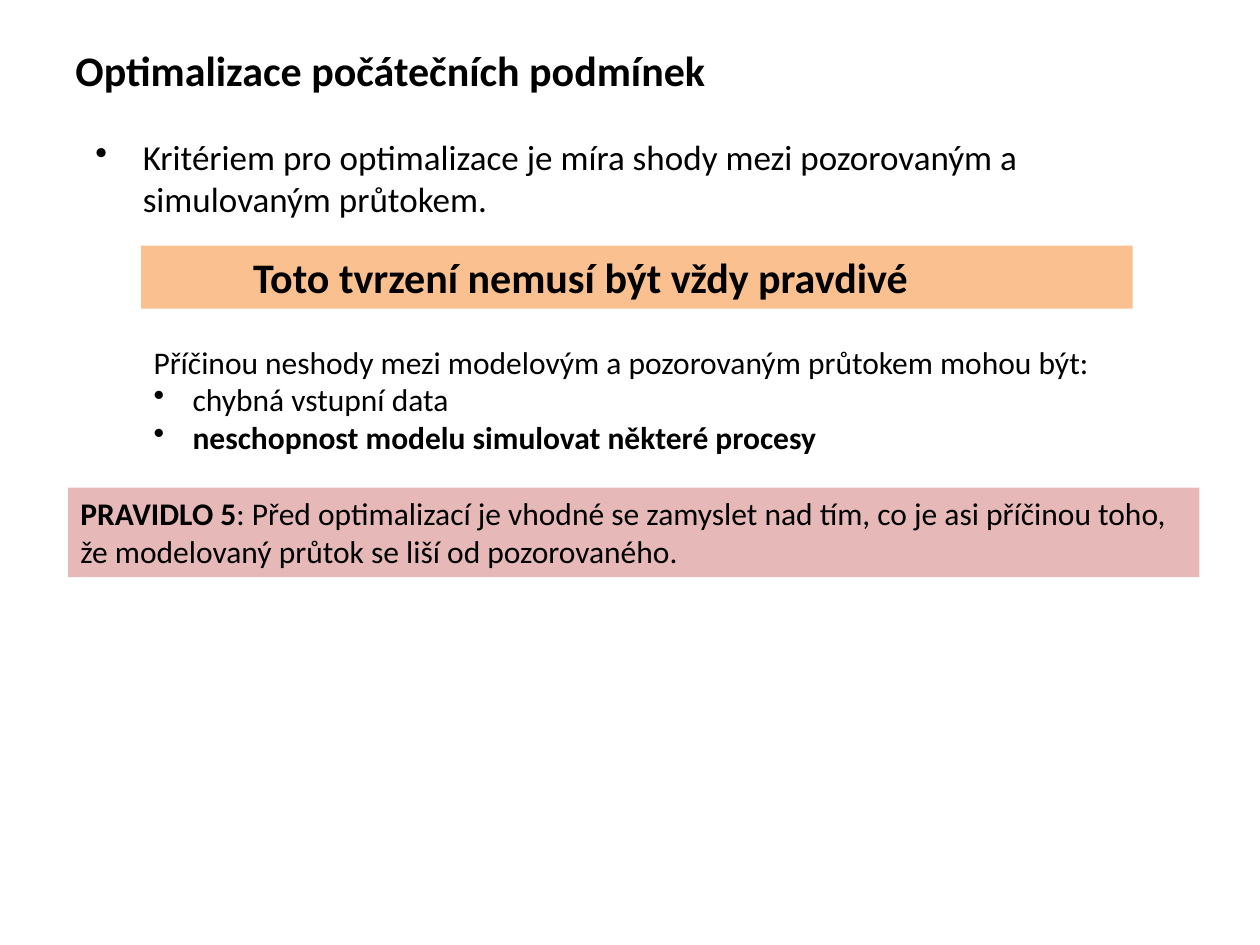
import pptx
import pptx.dml.color
import pptx.enum.shapes
import pptx.enum.text
import pptx.oxml.ns
import pptx.util
from lxml import etree

COLOURS = {"text": "000000", "warning": "FAC090", "rule": "E6B9B8"}
COLUMNS, ROWS = 100, 75


def colour(name):
    return pptx.dml.color.RGBColor.from_string(COLOURS[name])


class SlideBuilder:
    """Holds the style and the current slide; places are columns and rows."""

    font = "Calibri"

    def __init__(self, deck):
        self.page = deck.slides.add_slide(deck.slide_layouts[6])
        self.column = deck.slide_width / COLUMNS
        self.row = deck.slide_height / ROWS

    def place(self, left, top, width, height):
        return (round(left * self.column), round(top * self.row),
                round(width * self.column), round(height * self.row))

    def text(self, area, size, paragraphs, wrap=True):
        """Add a text box; each paragraph is a list of (words, bold) spans."""
        box = self.page.shapes.add_textbox(*self.place(*area))
        return self.fill_text(box, size, paragraphs, wrap)

    def banner(self, area, fill, size, paragraphs):
        """Add a filled rectangle with left-aligned text."""
        box = self.page.shapes.add_shape(
            pptx.enum.shapes.MSO_SHAPE.RECTANGLE, *self.place(*area))
        box.shadow.inherit = False
        box.fill.solid()
        box.fill.fore_color.rgb = colour(fill)
        box.line.fill.background()
        return self.fill_text(box, size, paragraphs)

    def fill_text(self, box, size, paragraphs, wrap=True):
        frame = box.text_frame
        frame.word_wrap = wrap
        frame.vertical_anchor = pptx.enum.text.MSO_ANCHOR.TOP
        for index, spans in enumerate(paragraphs):
            para = frame.add_paragraph() if index else frame.paragraphs[0]
            para.alignment = pptx.enum.text.PP_ALIGN.LEFT
            for words, bold in spans:
                span = para.add_run()
                span.text = words
                span.font.name = self.font
                span.font.size = pptx.util.Pt(size)
                span.font.bold = bold
                span.font.color.rgb = colour("text")
        return frame.paragraphs

    def indent(self, para, columns, bullet=False):
        """Indent a paragraph, hanging behind a bullet if asked."""
        margin = round(columns * self.column)
        properties = para._p.get_or_add_pPr()
        properties.set("marL", str(margin))
        properties.set("indent", str(-margin if bullet else 0))
        if bullet:
            tag = pptx.oxml.ns.qn("a:buChar")
            etree.SubElement(properties, tag).set("char", "•")


def main():
    deck = pptx.Presentation()
    deck.slide_width = pptx.util.Inches(10)
    deck.slide_height = pptx.util.Inches(7.5)
    slide = SlideBuilder(deck)

    # Title
    slide.text((5, 3, 90, 6.1), 24,
               [[("Optimalizace počátečních podmínek", True)]])

    # Criterion
    criterion = slide.text((6.6, 10.3, 87.4, 56.7), 20, [
        [("Kritériem pro optimalizace je míra shody mezi pozorovaným "
          "a simulovaným průtokem.", False)]])[0]
    criterion.space_before = pptx.util.Pt(12)
    slide.indent(criterion, 3.75, bullet=True)

    # Warning banner
    warning = slide.banner((11.2, 19.5, 78.7, 5), "warning", 24, [
        [("Toto tvrzení nemusí být vždy pravdivé", True)]])[0]
    slide.indent(warning, 7.9)

    # Causes of the mismatch
    causes = slide.text((11.2, 26.7, 78.5, 10.1), 18, [
        [("Příčinou neshody mezi modelovým a pozorovaným průtokem "
          "mohou být:", False)],
        [("chybná vstupní data", False)],
        [("neschopnost modelu simulovat některé procesy", True)]], wrap=False)
    for cause in causes[1:]:
        slide.indent(cause, 3.1, bullet=True)

    # Rule banner
    slide.banner((5.4, 38.7, 89.8, 7.1), "rule", 18, [
        [("PRAVIDLO 5", True),
         (": Před optimalizací je vhodné se zamyslet nad tím, co je asi "
          "příčinou toho, že modelovaný průtok se liší od pozorovaného.",
          False)]])

    deck.save("out.pptx")


if __name__ == "__main__":
    main()
